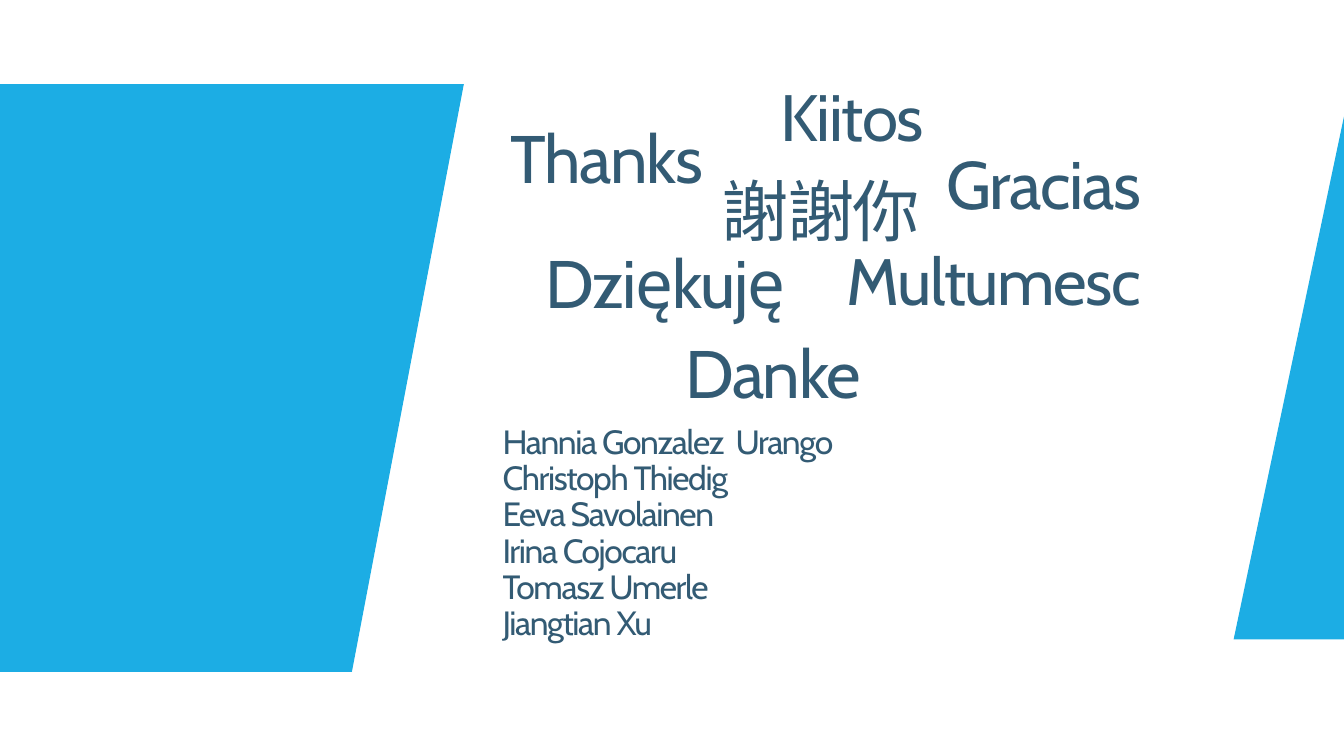
"""Build a closing slide that says thank you in seven languages."""
from dataclasses import dataclass

from lxml.etree import SubElement
from pptx import Presentation
from pptx.dml.color import RGBColor
from pptx.enum.lang import MSO_LANGUAGE_ID as Language
from pptx.enum.text import MSO_ANCHOR as Anchor, MSO_AUTO_SIZE as AutoSize, PP_ALIGN as Align
from pptx.oxml.ns import qn
from pptx.util import Cm, Pt


@dataclass(frozen=True)
class Theme:
    font: str = "Cabin"
    text: RGBColor = RGBColor(0x33, 0x5B, 0x74)
    panel: RGBColor = RGBColor(0x1C, 0xAD, 0xE4)
    thanks_size: float = 48
    fitted_size: float = 46.8
    names_size: float = 24
    tracking: int = -100
    line_spacing: float = 0.9


THEME = Theme()


def write_text(shape, text, size, language=Language.ENGLISH_US):
    """Fill a text shape and format its paragraphs."""
    text_frame = shape.text_frame
    text_frame.text = text
    text_frame.word_wrap = True
    text_frame.auto_size = AutoSize.NONE
    text_frame.vertical_anchor = Anchor.BOTTOM
    for paragraph in text_frame.paragraphs:
        paragraph.alignment = Align.LEFT
        paragraph.line_spacing = THEME.line_spacing
        paragraph.space_before = Pt(0)
        for run in paragraph.runs:
            run.font.name = THEME.font
            run.font.size = Pt(size)
            run.font.color.rgb = THEME.text
            run.font.language_id = language
            run.font._element.set("spc", str(THEME.tracking))


presentation = Presentation()
presentation.slide_width = Cm(33.87)
presentation.slide_height = Cm(19.05)
slide = presentation.slides.add_slide(presentation.slide_layouts[1])

panels = [
    [(8.87, 16.93), (0, 16.93), (0, 2.12), (11.69, 2.12)],
    [(33.87, 16.11), (31.09, 16.11), (33.87, 2.94)],
]
for corners in panels:
    points = [(Cm(x), Cm(y)) for x, y in corners]
    builder = slide.shapes.build_freeform(*points[0])
    builder.add_line_segments(points[1:], close=True)
    panel = builder.convert_to_shape()
    panel.shadow.inherit = False
    panel.fill.solid()
    panel.fill.fore_color.rgb = THEME.panel
    panel.line.fill.background()

title = slide.shapes.title
title.left, title.top, title.width, title.height = Cm(13.49), Cm(5.87), Cm(7.34), Cm(2.41)
write_text(title, "Dziękuję", THEME.thanks_size)

thanks = [
    ("Multumesc", (21.08, 5.77, 8.41, 2.41), THEME.fitted_size, Language.ENGLISH_US),
    ("Gracias", (23.6, 3.25, 7.34, 2.51), THEME.thanks_size, Language.ENGLISH_US),
    ("Thanks", (12.61, 2.71, 6.22, 2.41), THEME.thanks_size, Language.ENGLISH_US),
    ("謝謝你", (17.93, 4.04, 6.02, 2.41), THEME.thanks_size, Language.TRADITIONAL_CHINESE),
    ("Kiitos", (19.42, 1.54, 5, 2.51), THEME.fitted_size, Language.ENGLISH_US),
    ("Danke", (17.02, 8.13, 7.34, 2.41), THEME.thanks_size, Language.ENGLISH_US),
]
for word, box, size, language in thanks:
    text_box = slide.shapes.add_textbox(*[Cm(length) for length in box])
    write_text(text_box, word, size, language)

names = [
    "Hannia Gonzalez  Urango",
    "Christoph Thiedig",
    "Eeva Savolainen",
    "Irina Cojocaru",
    "Tomasz Umerle",
    "Jiangtian Xu",
]
names_body = slide.placeholders[1]
names_body.left, names_body.top = Cm(12.41), Cm(10.89)
names_body.width, names_body.height = Cm(15.11), Cm(5.44)
write_text(names_body, "\n".join(names), THEME.names_size)
for paragraph in names_body.text_frame.paragraphs:
    properties = paragraph._p.get_or_add_pPr()
    properties.set("marL", "0")
    properties.set("indent", "0")
    SubElement(properties, qn("a:buNone"))

presentation.save("out.pptx")
